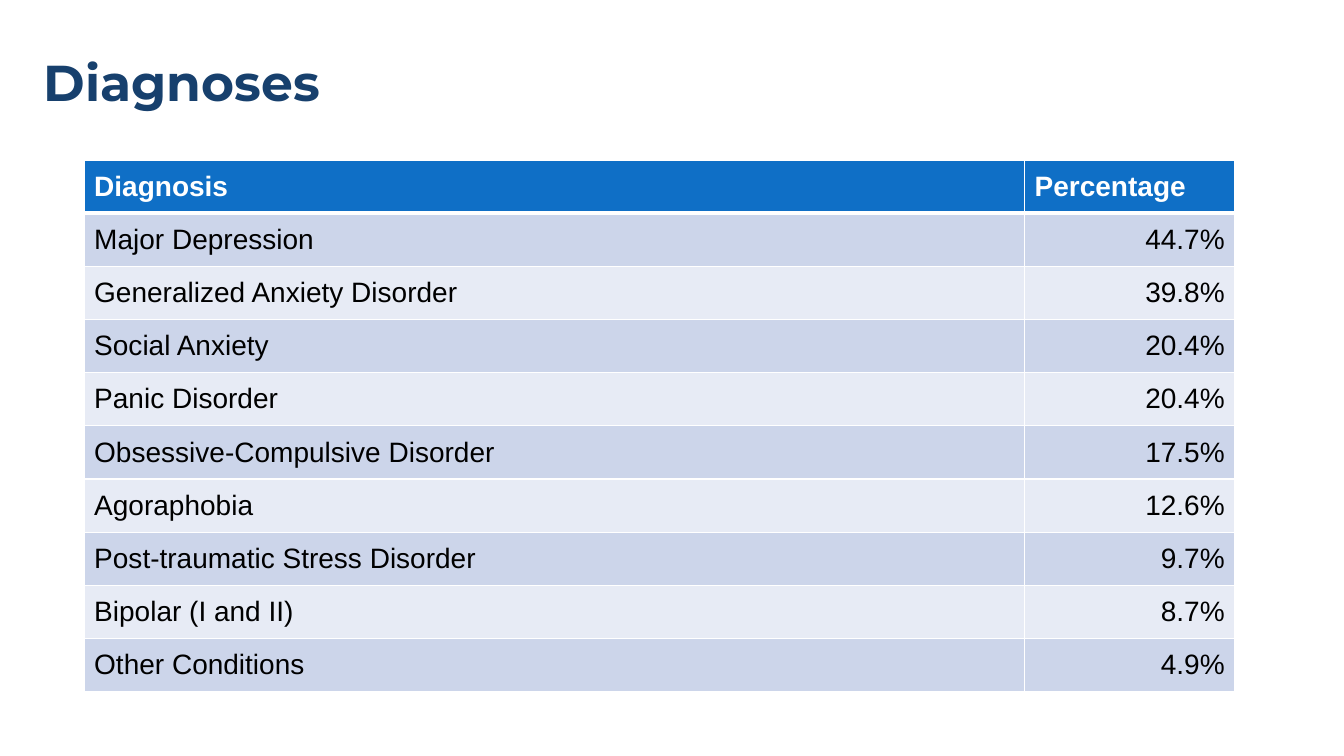
from lxml import etree
from pptx import Presentation
from pptx.dml.color import RGBColor
from pptx.enum.text import MSO_ANCHOR, PP_ALIGN
from pptx.oxml.ns import qn
from pptx.util import Cm, Pt

LEFT, RIGHT = PP_ALIGN.LEFT, PP_ALIGN.RIGHT
MIDDLE = MSO_ANCHOR.MIDDLE

NAVY = RGBColor(0x17, 0x40, 0x6D)
BLUE = RGBColor(0x0F, 0x6F, 0xC6)
DARK_BAND = RGBColor(0xCC, 0xD5, 0xEA)
LIGHT_BAND = RGBColor(0xE7, 0xEB, 0xF5)
WHITE = RGBColor(0xFF, 0xFF, 0xFF)
BLACK = RGBColor(0x00, 0x00, 0x00)

DIAGNOSES = [
    ("Diagnosis", "Percentage"),
    ("Major Depression", "44.7%"),
    ("Generalized Anxiety Disorder", "39.8%"),
    ("Social Anxiety", "20.4%"),
    ("Panic Disorder", "20.4%"),
    ("Obsessive-Compulsive Disorder", "17.5%"),
    ("Agoraphobia", "12.6%"),
    ("Post-traumatic Stress Disorder", "9.7%"),
    ("Bipolar (I and II)", "8.7%"),
    ("Other Conditions", "4.9%"),
]


def write(para, text, *, font, size, color, bold=False, align=LEFT):
    para.alignment = align
    span = para.add_run()
    span.text = text
    span.font.name = font
    span.font.size = Pt(size)
    span.font.bold = bold
    span.font.color.rgb = color


def add_border(cell, side, width):
    line = etree.SubElement(cell._tc.get_or_add_tcPr(), qn(f"a:{side}"), w=str(Pt(width)))
    fill = etree.SubElement(line, qn("a:solidFill"))
    etree.SubElement(fill, qn("a:srgbClr"), val=str(WHITE))


deck = Presentation()
deck.slide_width, deck.slide_height = Cm(33.87), Cm(19.05)
page = deck.slides.add_slide(deck.slide_layouts[5])

# Title
title = page.shapes.title
title.left, title.top, title.width, title.height = Cm(0.84), Cm(0.99), Cm(30.91), Cm(2.29)
title.text_frame.vertical_anchor = MIDDLE
heading = title.text_frame.paragraphs[0]
heading.line_spacing = 0.9
write(heading, "Diagnoses", font="Montserrat", size=36, color=NAVY, bold=True)

# Table of diagnoses
frame = page.shapes.add_table(len(DIAGNOSES), 2, Cm(2.12), Cm(4.03), Cm(29), Cm(13.4))
table = frame.table
table.columns[0].width, table.columns[1].width = Cm(23.7), Cm(5.3)

for row, texts in enumerate(DIAGNOSES):
    is_header = row == 0
    table.rows[row].height = Cm(1.34)
    for column, text in enumerate(texts):
        cell = table.cell(row, column)
        cell.vertical_anchor = MIDDLE

        # White rules, thicker below the header
        for side in ("lnL", "lnR", "lnT", "lnB"):
            below_header = (row, side) in ((0, "lnB"), (1, "lnT"))
            add_border(cell, side, 3 if below_header else 1)

        cell.fill.solid()
        cell.fill.fore_color.rgb = BLUE if is_header else DARK_BAND if row % 2 else LIGHT_BAND
        write(
            cell.text_frame.paragraphs[0], text, font="Arial", size=20,
            color=WHITE if is_header else BLACK, bold=is_header,
            align=RIGHT if column == 1 and not is_header else LEFT,
        )

deck.save("out.pptx")
